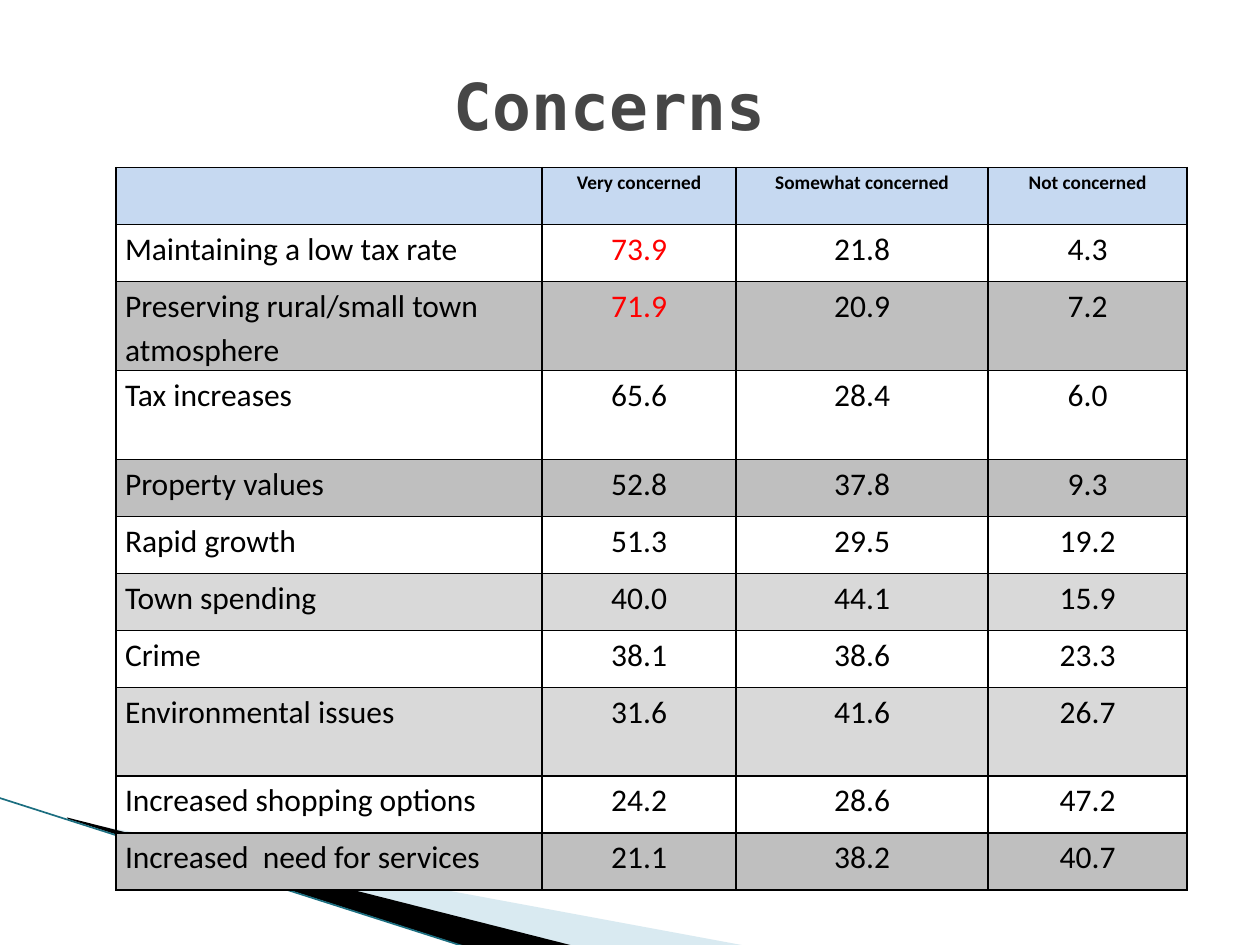
from lxml.etree import SubElement
from pptx import Presentation
from pptx.dml.color import RGBColor
from pptx.enum.shapes import MSO_CONNECTOR
from pptx.enum.text import MSO_ANCHOR, PP_ALIGN
from pptx.oxml.ns import qn
from pptx.util import Cm, Pt

BLACK = RGBColor(0x00, 0x00, 0x00)
SLATE = RGBColor(0x46, 0x46, 0x46)
RED = RGBColor(0xFF, 0x00, 0x00)
BLUE = RGBColor(0xC6, 0xD9, 0xF1)
GRAY = RGBColor(0xBF, 0xBF, 0xBF)
PALE = RGBColor(0xD9, 0xD9, 0xD9)
SKY = RGBColor(0xA0, 0xCB, 0xDC)
TEAL = RGBColor(0x1B, 0x6E, 0x80)

LOW, TALL = 1.15, 1.79
WIDTHS = (8.59, 3.91, 5.08, 4.01)
HEADS = ("", "Very concerned", "Somewhat concerned", "Not concerned")
ROWS = (
    (LOW, None, "Maintaining a low tax rate", "73.9", "21.8", "4.3"),
    (TALL, GRAY, "Preserving rural/small town atmosphere", "71.9", "20.9", "7.2"),
    (TALL, None, "Tax increases", "65.6", "28.4", "6.0"),
    (LOW, GRAY, "Property values", "52.8", "37.8", "9.3"),
    (LOW, None, "Rapid growth", "51.3", "29.5", "19.2"),
    (LOW, PALE, "Town spending", "40.0", "44.1", "15.9"),
    (LOW, None, "Crime", "38.1", "38.6", "23.3"),
    (TALL, PALE, "Environmental issues", "31.6", "41.6", "26.7"),
    (LOW, None, "Increased shopping options", "24.2", "28.6", "47.2"),
    (LOW, GRAY, "Increased  need for services", "21.1", "38.2", "40.7"),
)


def style(para, face, size, color, bold, align):
    para.alignment = align
    font = para.font
    font.name = face
    font.size = Pt(size)
    font.bold = bold
    font.color.rgb = color


def add_wedge(slide, points, color, alpha=None):
    start, *rest = [(Cm(x), Cm(y)) for x, y in points]
    pen = slide.shapes.build_freeform(*start)
    pen.add_line_segments(rest)
    wedge = pen.convert_to_shape()
    wedge.shadow.inherit = False
    wedge.line.fill.background()
    wedge.fill.solid()
    wedge.fill.fore_color.rgb = color
    if alpha:
        tint = wedge.fill._xPr.find(qn("a:solidFill"))[0]
        SubElement(tint, qn("a:alpha"), val=str(alpha * 1000))


def add_line(slide, x1, y1, x2, y2):
    line = slide.shapes.add_connector(
        MSO_CONNECTOR.STRAIGHT, Cm(x1), Cm(y1), Cm(x2), Cm(y2))
    line.line.color.rgb = TEAL
    line.line.width = Pt(0.95)
    SubElement(line._element.spPr, qn("a:effectLst"))


def add_title(slide, text):
    box = slide.shapes.add_textbox(Cm(1.9), Cm(1.47), Cm(20.78), Cm(1.27))
    frame = box.text_frame
    frame.word_wrap = True
    frame.vertical_anchor = MSO_ANCHOR.MIDDLE
    frame.text = text
    style(frame.paragraphs[0], "DejaVu Sans Mono", 36.9, SLATE, True,
          PP_ALIGN.CENTER)


def add_edges(cell):
    props = cell._tc.get_or_add_tcPr()
    for side in "LRTB":
        edge = SubElement(props, qn(f"a:ln{side}"), w=str(Pt(1)))
        fill = SubElement(edge, qn("a:solidFill"))
        SubElement(fill, qn("a:srgbClr"), val=str(BLACK))


def fill_cell(cell, text, size, color, bold, align, back):
    add_edges(cell)
    if back is None:
        cell.fill.background()
    else:
        cell.fill.solid()
        cell.fill.fore_color.rgb = back
    cell.margin_left = cell.margin_right = Cm(0.18)
    cell.margin_top = cell.margin_bottom = 0
    cell.text = text
    para = cell.text_frame.paragraphs[0]
    para.line_spacing = 1.15
    style(para, "Calibri", size, color, bold, align)


def add_grid(slide):
    rows = ((LOW, BLUE, *HEADS), *ROWS)
    high = sum(row[0] for row in rows)
    table = slide.shapes.add_table(
        len(rows), len(WIDTHS), Cm(2.34), Cm(3.38),
        Cm(sum(WIDTHS)), Cm(high)).table
    table.first_row = table.horz_banding = False
    for column, width in zip(table.columns, WIDTHS):
        column.width = Cm(width)
    for r, (height, back, *texts) in enumerate(rows):
        table.rows[r].height = Cm(height)
        head = r == 0
        for c, text in enumerate(texts):
            color = RED if c == 1 and r in (1, 2) else BLACK
            align = PP_ALIGN.CENTER if c else PP_ALIGN.LEFT
            fill_cell(table.cell(r, c), text, 11 if head else 18,
                      color, head, align, back)


def main():
    deck = Presentation()
    deck.slide_width, deck.slide_height = Cm(25.4), Cm(19.05)
    slide = deck.slides.add_slide(deck.slide_layouts[6])
    add_wedge(slide, ((1.4, 16.54), (15.11, 19.08), (11.58, 19.08),
                      (1.4, 16.51)), SKY, 40)
    add_wedge(slide, ((1.35, 16.48), (11.61, 19.08), (9.45, 19.1),
                      (1.37, 16.51)), BLACK)
    add_line(slide, -0.03, 16.08, 9.42, 19.1)
    add_title(slide, "Concerns")
    add_grid(slide)
    deck.save("out.pptx")


if __name__ == "__main__":
    main()
